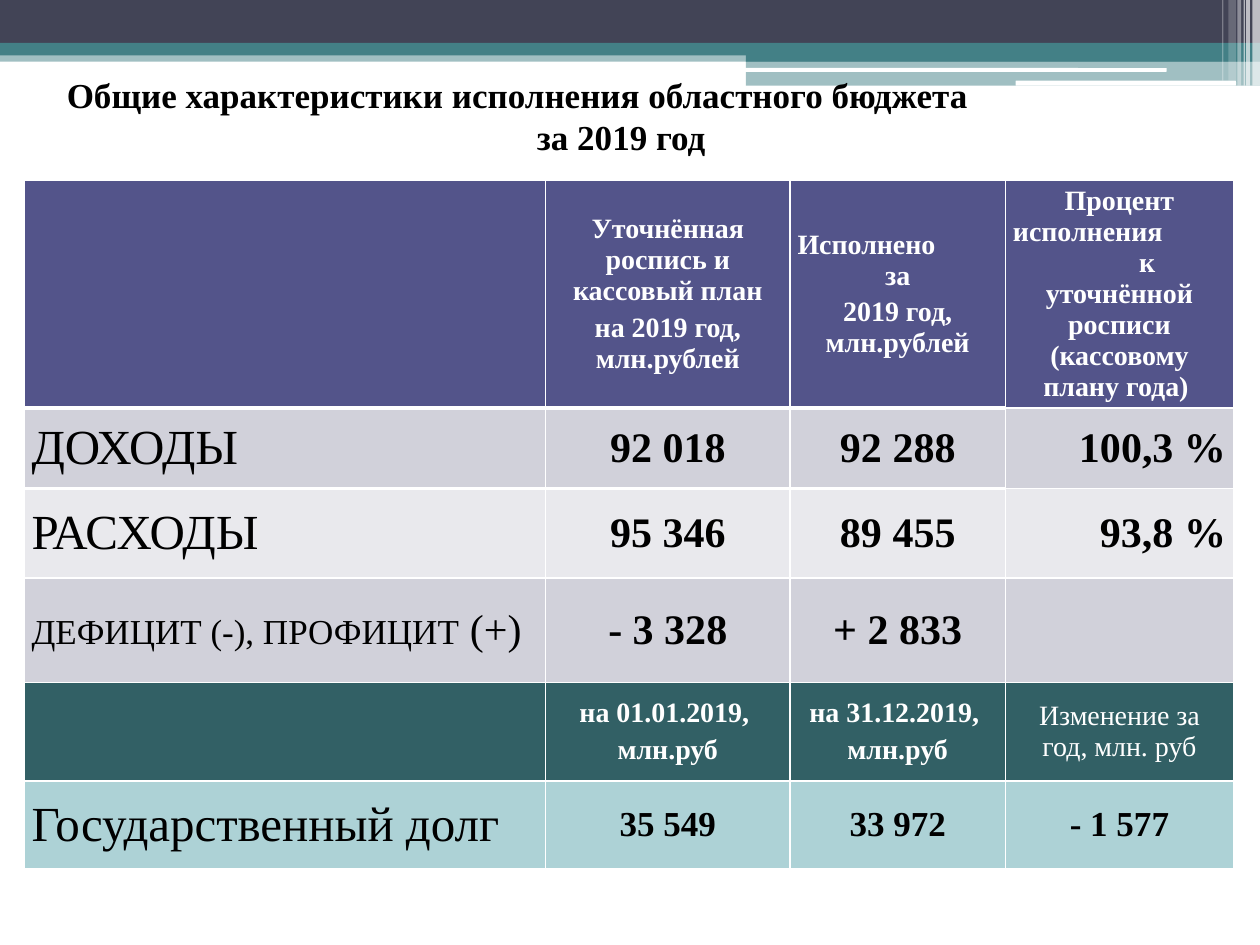
import dataclasses

import lxml.etree
import pptx
import pptx.dml.color
import pptx.enum.shapes
import pptx.enum.text
import pptx.oxml.ns
import pptx.util

Inches = pptx.util.Inches
Pt = pptx.util.Pt
Align = pptx.enum.text.PP_ALIGN
Anchor = pptx.enum.text.MSO_ANCHOR
Shape = pptx.enum.shapes.MSO_SHAPE
qn = pptx.oxml.ns.qn

FONT = "Times New Roman"
WHITE, BLACK = "FFFFFF", "000000"
NAVY, TEAL = "424456", "438086"


@dataclasses.dataclass
class Line:
    spans: list
    align: int = Align.CENTER
    color: str = BLACK
    bold: bool = True
    indent: float = 0
    before: float = 0


def rgb(value):
    return pptx.dml.color.RGBColor.from_string(value)


def write_lines(frame, lines):
    for index, line in enumerate(lines):
        para = frame.paragraphs[0] if index == 0 else frame.add_paragraph()
        para.alignment = line.align
        para.space_before = Pt(line.before)
        if line.indent:
            para._p.get_or_add_pPr().set("marL", str(Inches(line.indent)))
        for text, size in line.spans:
            span = para.add_run()
            span.text = text
            span.font.name = FONT
            span.font.size = Pt(size)
            span.font.bold = line.bold
            span.font.color.rgb = rgb(line.color)


def add_bar(page, left, top, width, height, color, opacity=100, kind=Shape.RECTANGLE):
    bar = page.shapes.add_shape(
        kind, Inches(left), Inches(top), Inches(width), Inches(height))
    bar.shadow.inherit = False
    bar.line.fill.background()
    bar.fill.solid()
    bar.fill.fore_color.rgb = rgb(color)
    if opacity < 100:
        tint = bar._element.spPr.find(qn("a:solidFill"))[0]
        lxml.etree.SubElement(tint, qn("a:alpha")).set("val", str(opacity * 1000))


def add_banner(page, left, top, width):
    right = left + width
    half = left + 5.92
    add_bar(page, left, top + 0.4, width, 0.09, TEAL, 50)
    add_bar(page, left, top, width, 0.34, NAVY)
    add_bar(page, left, top + 0.34, width, 0.1, TEAL)
    add_bar(page, half, top + 0.39, right - half, 0.1, TEAL)
    add_bar(page, half, top + 0.48, right - half, 0.2, TEAL, 50)
    add_bar(page, left + 5.91, top + 0.54, 3.35, 0.03, WHITE, kind=Shape.ROUNDED_RECTANGLE)
    add_bar(page, left + 8.06, top + 0.64, 1.75, 0.04, WHITE, kind=Shape.ROUNDED_RECTANGLE)
    stripes = [(0.06, 0.06, 0.68, 65), (0.11, 0.03, 0.68, 65), (0.13, 0.01, 0.68, 60),
               (0.18, 0.03, 0.68, 40), (0.25, 0.06, 0.64, 20), (0.3, 0.01, 0.64, 30)]
    for offset, stripe, height, opacity in stripes:
        add_bar(page, right - offset, top, stripe, height, WHITE, opacity)


def place_title(page, left, top, width, height):
    title = page.shapes.title
    page.shapes._spTree.append(title._element)
    title.left, title.top = Inches(left), Inches(top)
    title.width, title.height = Inches(width), Inches(height)
    frame = title.text_frame
    frame.word_wrap = True
    frame.auto_size = pptx.enum.text.MSO_AUTO_SIZE.NONE
    frame.vertical_anchor = Anchor.MIDDLE
    write_lines(frame, [
        Line([("Общие характеристики исполнения областного бюджета", 20)],
             Align.LEFT, indent=0.12),
        Line([("за 2019 год ", 20)]),
    ])


def heading(text, **options):
    return Line([(text, 16)], color=WHITE, **options)


def label(text, size=28):
    return [Line([(text, size)], Align.LEFT, bold=False)]


def number(text, size=24, align=Align.CENTER):
    return [Line([(text, size)], align)]


def budget_rows():
    gap = 3.2
    return [
        ("53548A", 1.8, [
            [],
            [heading("Уточнённая роспись и кассовый план"),
             heading("на 2019 год, млн.рублей", before=gap)],
            [heading("Исполнено", align=Align.LEFT), heading("за"),
             heading("2019 год, млн.рублей", before=gap)],
            [heading("Процент"), heading("исполнения", align=Align.LEFT),
             heading("к", indent=0.44),
             heading("уточнённой росписи (кассовому плану года) ")],
        ]),
        ("D1D1DA", 0.64, [label("ДОХОДЫ"), number("92 018"), number("92 288"),
                          number("100,3 %", align=Align.RIGHT)]),
        ("E9E9ED", 0.71, [label("РАСХОДЫ"), number("95 346"), number("89 455"),
                          number("93,8 %", align=Align.RIGHT)]),
        ("D1D1DA", 0.83, [
            [Line([("ДЕФИЦИТ (-), ПРОФИЦИТ", 20), (" (+)", 24)], Align.LEFT, bold=False)],
            number("- 3 328"), number("+ 2 833"), []]),
        ("326065", 0.78, [
            [],
            [heading("на 01.01.2019, "), heading("млн.руб", before=gap)],
            [heading("на 31.12.2019, "), heading(" млн.руб ", before=gap)],
            [heading("Изменение за год, млн. руб", bold=False)]]),
        ("ADD2D6", 0.7, [label("Государственный долг"), number("35 549", 20),
                         number("33 972", 20), number("- 1 577", 20)]),
    ]


def set_borders(cell, widths):
    properties = cell._tc.get_or_add_tcPr()
    for index, (side, width) in enumerate(widths.items()):
        edge = lxml.etree.Element(qn("a:ln" + side), w=str(Pt(width)))
        fill = lxml.etree.SubElement(edge, qn("a:solidFill"))
        lxml.etree.SubElement(fill, qn("a:srgbClr")).set("val", WHITE)
        properties.insert(index, edge)


def add_budget_table(page, left, top, width):
    rows = budget_rows()
    columns = [4.14, 1.94, 1.71, 1.81]
    height = sum(row[1] for row in rows)
    table = page.shapes.add_table(
        len(rows), len(columns),
        Inches(left), Inches(top), Inches(width), Inches(height)).table
    table.horz_banding = False
    for column, size in zip(table.columns, columns):
        column.width = Inches(size)
    for row_index, (color, size, contents) in enumerate(rows):
        table.rows[row_index].height = Inches(size)
        for column_index, lines in enumerate(contents):
            cell = table.cell(row_index, column_index)
            cell.fill.solid()
            cell.fill.fore_color.rgb = rgb(color)
            cell.vertical_anchor = Anchor.MIDDLE
            cell.margin_left = cell.margin_right = Inches(0.06)
            cell.margin_top = cell.margin_bottom = Inches(0.04 if row_index == 0 else 0)
            thick = 2.25 if column_index < 3 else 1
            set_borders(cell, {"L": 1, "R": 1,
                               "T": thick if row_index in (1, 2) else 1,
                               "B": thick if row_index in (0, 1) else 1})
            write_lines(cell.text_frame, lines)


def main():
    deck = pptx.Presentation()
    deck.slide_width, deck.slide_height = Inches(10), Inches(7.5)
    page = deck.slides.add_slide(deck.slide_layouts[5])
    add_banner(page, 0, 0, 10)
    place_title(page, 0.31, 0.57, 9.19, 0.7)
    add_budget_table(page, 0.19, 1.43, 9.6)
    deck.save("out.pptx")


if __name__ == "__main__":
    main()
